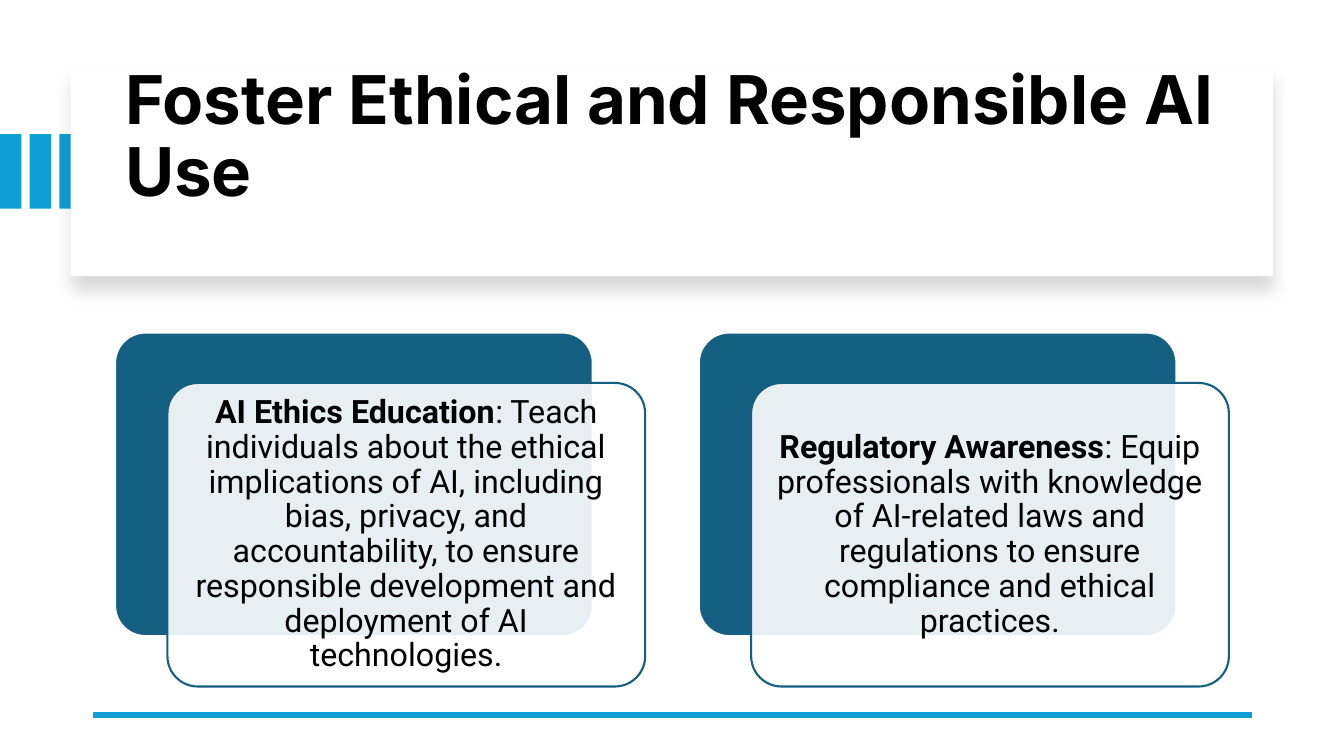
from dataclasses import dataclass

from lxml.etree import SubElement
from pptx import Presentation
from pptx.dml.color import RGBColor
from pptx.enum.shapes import MSO_CONNECTOR, MSO_SHAPE
from pptx.enum.text import MSO_ANCHOR, MSO_AUTO_SIZE, PP_ALIGN
from pptx.oxml.ns import qn
from pptx.util import Cm, Pt


@dataclass(frozen=True)
class Theme:
    accent: str = "0F9ED5"
    dark: str = "156082"
    white: str = "FFFFFF"
    text: str = "000000"
    title_font: str = "Inter"
    body_font: str = "Roboto"
    title_size: int = 48
    body_size: int = 23
    outline: float = 1.5
    rule: float = 4.5


@dataclass(frozen=True)
class Box:
    left: float
    top: float
    width: float
    height: float

    def shifted(self, dx: float, dy: float = 0) -> "Box":
        return Box(self.left + dx, self.top + dy, self.width, self.height)

    def lengths(self) -> list:
        return [Cm(v) for v in (self.left, self.top, self.width, self.height)]


@dataclass(frozen=True)
class Topic:
    name: str
    detail: str


THEME = Theme()
STRIPE, STRIPE_STEP, STRIPE_COUNT = Box(0, 3.38, 0.54, 1.88), 0.75, 3
PANEL = Box(1.78, 1.7, 30.3, 5.26)
TITLE = Box(2.9, 2.26, 28.27, 4.32)
CARD, CARD_STEP = Box(2.9, 8.38, 12.04, 7.65), 14.71
FRONT_SHIFT = (1.32, 1.27)
TOPICS = [
    Topic("AI Ethics Education",
          ": Teach individuals about the ethical implications of AI, including bias, "
          "privacy, and accountability, to ensure responsible development and "
          "deployment of AI technologies."),
    Topic("Regulatory Awareness",
          ": Equip professionals with knowledge of AI-related laws and regulations "
          "to ensure compliance and ethical practices."),
]


def apply(target, values: dict) -> None:
    for name, value in values.items():
        setattr(target, name, value)


def add_box(s, kind, box: Box, fill: str, line: str | None = None):
    sp = s.shapes.add_shape(kind, *box.lengths())
    sp.shadow.inherit = False
    sp.fill.solid()
    sp.fill.fore_color.rgb = RGBColor.from_string(fill)
    if line:
        sp.line.color.rgb = RGBColor.from_string(line)
        sp.line.width = Pt(THEME.outline)
    else:
        sp.line.fill.background()
    return sp


def add_run(p, text: str, font: str, size: float, bold: bool) -> None:
    r = p.add_run()
    r.text = text
    apply(r.font, {"name": font, "size": Pt(size), "bold": bold})
    r.font.color.rgb = RGBColor.from_string(THEME.text)


def set_alpha(color, percent: int) -> None:
    SubElement(color, qn("a:alpha"), val=str(percent * 1000))


def add_shadow(sp) -> None:
    effects = sp._element.spPr.find(qn("a:effectLst"))
    shadow = SubElement(effects, qn("a:outerShdw"), blurRad=str(Pt(11)),
                        dist=str(Pt(10)), dir="5400000", algn="t", rotWithShape="0")
    set_alpha(SubElement(shadow, qn("a:srgbClr"), val=THEME.text), 15)


def add_title(s, panel) -> None:
    title = s.shapes.title
    left, top, width, height = TITLE.lengths()
    apply(title, {"left": left, "top": top, "width": width, "height": height})
    tf = title.text_frame
    # The deep bottom inset lifts the centred heading by half a line
    apply(tf, {"word_wrap": True, "auto_size": MSO_AUTO_SIZE.NONE,
               "vertical_anchor": MSO_ANCHOR.MIDDLE, "margin_bottom": Cm(1.98)})
    p = tf.paragraphs[0]
    apply(p, {"alignment": PP_ALIGN.LEFT, "line_spacing": 0.9})
    add_run(p, "Foster Ethical and Responsible AI Use",
            THEME.title_font, THEME.title_size, True)
    panel._element.addnext(title._element)


def add_topic(s, topic: Topic, box: Box) -> None:
    back = add_box(s, MSO_SHAPE.ROUNDED_RECTANGLE, box, THEME.dark, THEME.white)
    front = add_box(s, MSO_SHAPE.ROUNDED_RECTANGLE, box.shifted(*FRONT_SHIFT),
                    THEME.white, THEME.dark)
    for sp in (back, front):
        sp.adjustments[0] = 0.1
    set_alpha(front._element.spPr.find(qn("a:solidFill"))[0], 90)
    tf = front.text_frame
    apply(tf, {"word_wrap": True, "vertical_anchor": MSO_ANCHOR.MIDDLE})
    apply(tf, {f"margin_{side}": Cm(0.25) for side in ("left", "top", "right", "bottom")})
    p = tf.paragraphs[0]
    apply(p, {"alignment": PP_ALIGN.CENTER, "line_spacing": 0.9})
    for text, bold in ((topic.name, True), (topic.detail, False)):
        add_run(p, text, THEME.body_font, THEME.body_size, bold)


def add_rule(s) -> None:
    rule = s.shapes.add_connector(MSO_CONNECTOR.STRAIGHT,
                                  Cm(31.55), Cm(18.01), Cm(2.34), Cm(18.01))
    rule.line.color.rgb = RGBColor.from_string(THEME.accent)
    rule.line.width = Pt(THEME.rule)
    SubElement(rule._element.spPr, qn("a:effectLst"))


def main() -> None:
    prs = Presentation()
    apply(prs, {"slide_width": Cm(33.87), "slide_height": Cm(19.05)})
    s = prs.slides.add_slide(prs.slide_layouts[5])

    # Stripes at the left edge
    for i in range(STRIPE_COUNT):
        add_box(s, MSO_SHAPE.RECTANGLE, STRIPE.shifted(i * STRIPE_STEP), THEME.accent)

    # Title on its raised panel
    panel = add_box(s, MSO_SHAPE.RECTANGLE, PANEL, THEME.white)
    add_shadow(panel)
    add_title(s, panel)

    # Bottom rule and topic cards
    add_rule(s)
    for i, topic in enumerate(TOPICS):
        add_topic(s, topic, CARD.shifted(i * CARD_STEP))

    prs.save("out.pptx")


if __name__ == "__main__":
    main()
